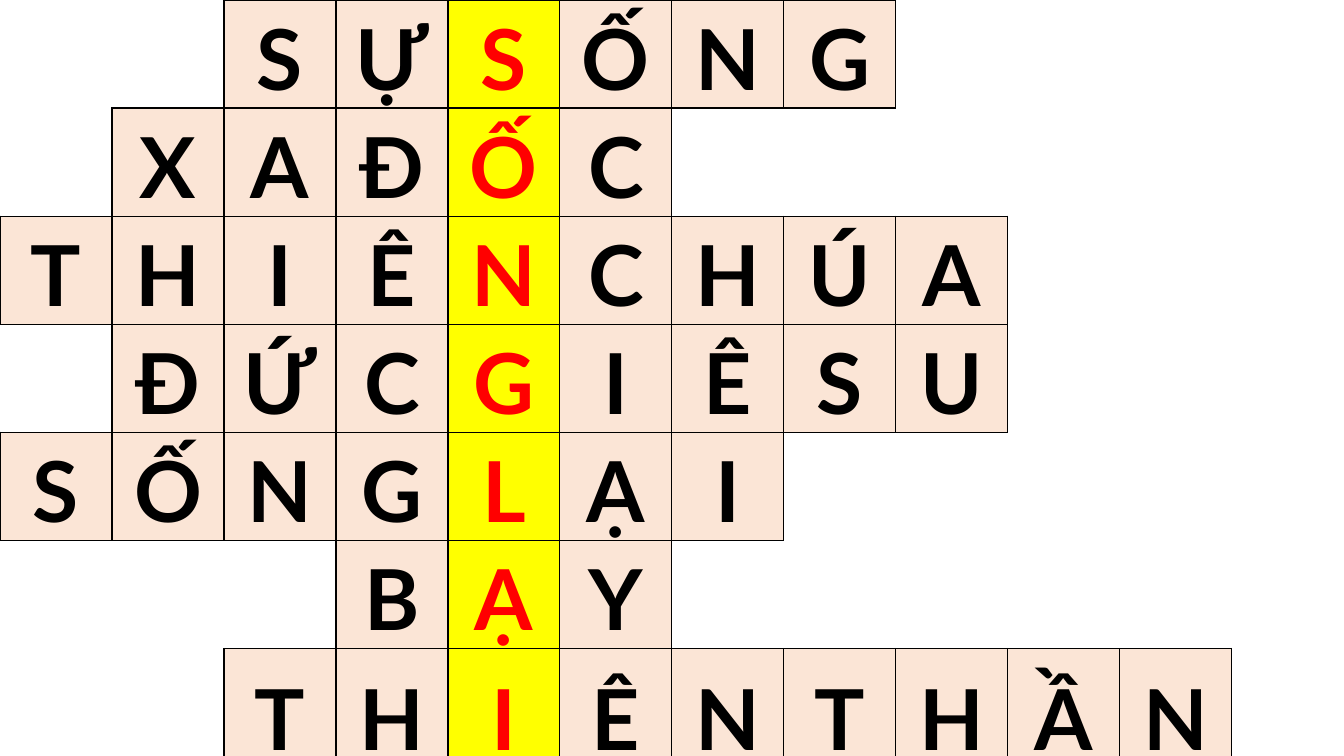
from dataclasses import dataclass

import pptx
import pptx.dml.color
import pptx.enum.text
import pptx.oxml
import pptx.oxml.ns
import pptx.table
import pptx.util
from lxml import etree

Inches = pptx.util.Inches
Pt = pptx.util.Pt

COLORS = {
    "blank": "FFFFFF",
    "square": "FBE5D6",
    "key square": "FFFF00",
    "letter": "000000",
    "key letter": "FF0000",
    "border": "000000",
}
WIDTH, HEIGHT = 13.33, 7.5
COLUMNS = 12
KEY_COLUMN = 4
ROW_HEIGHT, LAST_ROW_HEIGHT = 1.03, 1.32

# Side of a cell -> (row step, column step) to the neighbour across it
SIDES = {"lnL": (0, -1), "lnR": (0, 1), "lnT": (-1, 0), "lnB": (1, 0)}

CELL_FORMAT = {
    "margin_left": Inches(0.07),
    "margin_right": Inches(0.07),
    "margin_top": 0,
    "margin_bottom": 0,
    "vertical_anchor": pptx.enum.text.MSO_ANCHOR.MIDDLE,
}
PARAGRAPH_FORMAT = {
    "alignment": pptx.enum.text.PP_ALIGN.CENTER,
    "line_spacing": 1.07,
}
FONT_FORMAT = {"name": "Lato", "size": Pt(60), "bold": True}


@dataclass(frozen=True)
class Answer:
    start: int
    letters: str

    def letter(self, column: int) -> str:
        index = column - self.start
        return self.letters[index] if 0 <= index < len(self.letters) else ""


ANSWERS = [
    Answer(2, "SỰSỐNG"),
    Answer(1, "XAĐỐC"),
    Answer(0, "THIÊNCHÚA"),
    Answer(1, "ĐỨCGIÊSU"),
    Answer(0, "SỐNGLẠI"),
    Answer(3, "BẠY"),
    Answer(2, "THIÊNTHẦN"),
]


def color(name: str) -> pptx.dml.color.RGBColor:
    return pptx.dml.color.RGBColor.from_string(COLORS[name])


def apply(target: object, values: dict) -> None:
    for attribute, value in values.items():
        setattr(target, attribute, value)


def letter_at(row: int, column: int) -> str:
    return ANSWERS[row].letter(column) if 0 <= row < len(ANSWERS) else ""


def draw_borders(cell: pptx.table._Cell, row: int, column: int) -> None:
    """Line every side that touches a lettered square."""
    qn = pptx.oxml.ns.qn
    properties = cell._tc.get_or_add_tcPr()
    for side, (down, across) in SIDES.items():
        border = etree.SubElement(properties, qn(f"a:{side}"), w=str(Pt(1)))
        if letter_at(row, column) or letter_at(row + down, column + across):
            fill = etree.SubElement(border, qn("a:solidFill"))
            etree.SubElement(fill, qn("a:srgbClr"), val=COLORS["border"])
        else:
            etree.SubElement(border, qn("a:noFill"))


def draw_square(cell: pptx.table._Cell, row: int, column: int) -> None:
    letter = letter_at(row, column)
    prefix = "key " if column == KEY_COLUMN else ""
    draw_borders(cell, row, column)
    cell.fill.solid()
    cell.fill.fore_color.rgb = color(prefix + "square" if letter else "blank")
    apply(cell, CELL_FORMAT)
    if letter:
        paragraph = cell.text_frame.paragraphs[0]
        apply(paragraph, PARAGRAPH_FORMAT)
        run = paragraph.add_run()
        run.text = letter
        apply(run.font, FONT_FORMAT)
        run.font.color.rgb = color(prefix + "letter")


def main() -> None:
    deck = pptx.Presentation()
    deck.slide_width, deck.slide_height = Inches(WIDTH), Inches(HEIGHT)
    slide = deck.slides.add_slide(deck.slide_layouts[6])

    # Crossword grid
    crossword = slide.shapes.add_table(
        len(ANSWERS), COLUMNS, 0, 0, Inches(WIDTH), Inches(HEIGHT)
    ).table
    apply(crossword, {"first_row": False, "horz_banding": False})
    for grid_column in crossword.columns:
        grid_column.width = Inches(WIDTH / COLUMNS)
    for grid_row in crossword.rows:
        grid_row.height = Inches(ROW_HEIGHT)
    crossword.rows[len(ANSWERS) - 1].height = Inches(LAST_ROW_HEIGHT)

    # Squares and letters
    for row in range(len(ANSWERS)):
        for column in range(COLUMNS):
            draw_square(crossword.cell(row, column), row, column)

    deck.save("out.pptx")


if __name__ == "__main__":
    main()
